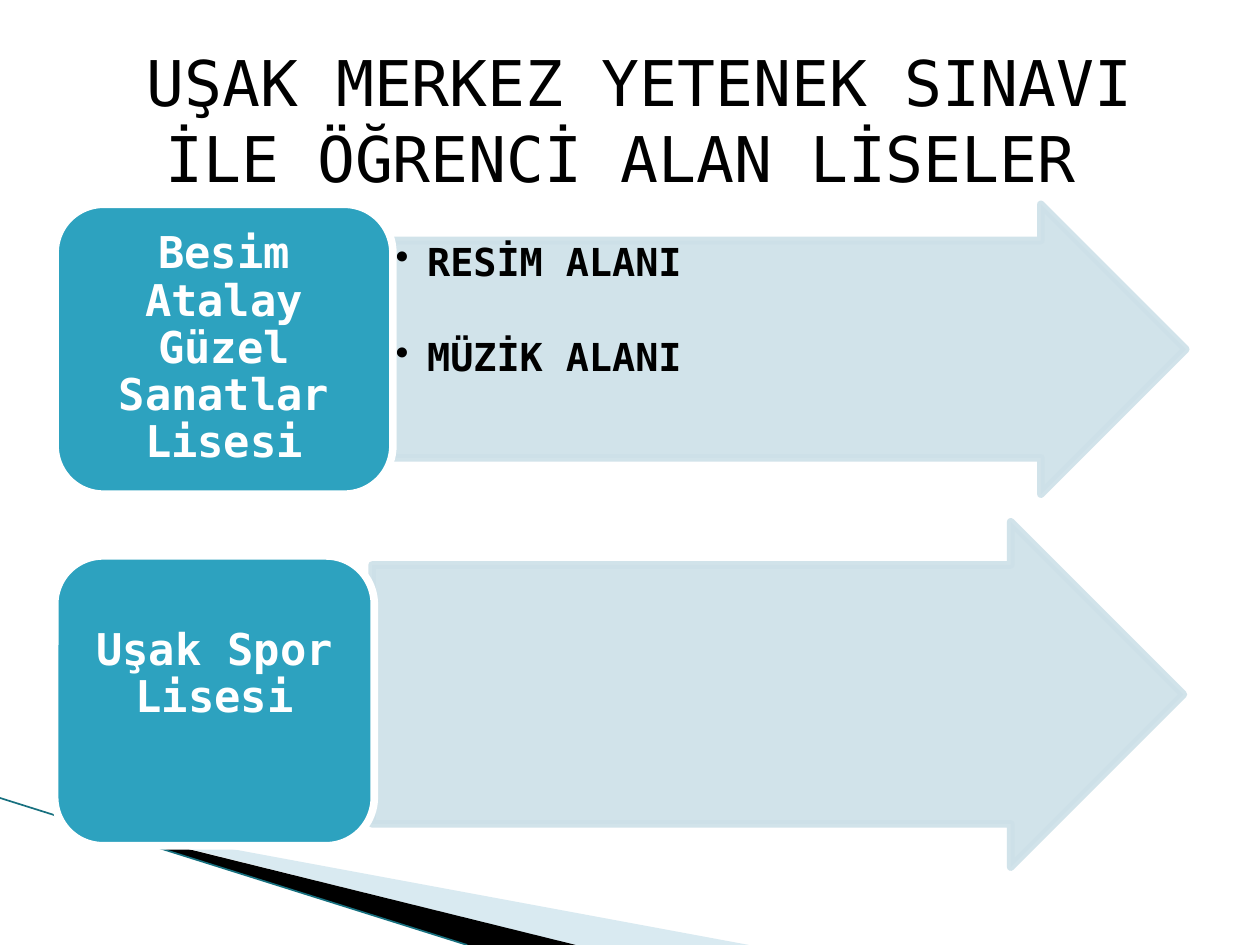
import pptx
import pptx.dml.color
import pptx.enum.shapes
import pptx.enum.text
import pptx.oxml.ns
import pptx.util
from lxml import etree

Pt = pptx.util.Pt
SHAPES = pptx.enum.shapes.MSO_SHAPE
ALIGN = pptx.enum.text.PP_ALIGN
ANCHOR = pptx.enum.text.MSO_ANCHOR
FONT = "DejaVu Sans Mono"


def add_element(parent, tag, **attributes):
    return etree.SubElement(parent, pptx.oxml.ns.qn(tag), **attributes)


def set_color(color_format, color, opacity=100):
    color_format.rgb = pptx.dml.color.RGBColor.from_string(color)
    if opacity < 100:
        element = color_format._xFill.find(pptx.oxml.ns.qn("a:srgbClr"))
        add_element(element, "a:alpha", val=str(opacity * 1000))


def paint(shape, color, opacity=100, line=None, line_width=4.33):
    shape.shadow.inherit = False
    shape.fill.solid()
    set_color(shape.fill.fore_color, color, opacity)
    if line is None:
        shape.line.fill.background()
    else:
        shape.line.fill.solid()
        set_color(shape.line.fill.fore_color, line, opacity)
        shape.line.width = Pt(line_width)


def write_text(shape, lines, size, color="000000", bold=False, align=ALIGN.CENTER,
               anchor=ANCHOR.MIDDLE, insets=(0, 0, 0, 0), spacing=1.0, gap=0, bullet=False):
    frame = shape.text_frame
    frame.word_wrap = True
    frame.vertical_anchor = anchor
    frame.margin_left, frame.margin_top, frame.margin_right, frame.margin_bottom = map(Pt, insets)
    for index, line in enumerate(lines):
        paragraph = frame.paragraphs[0] if index == 0 else frame.add_paragraph()
        paragraph.alignment = align
        paragraph.line_spacing = spacing
        if index:
            paragraph.space_before = Pt(gap)
        if bullet:
            properties = paragraph._p.get_or_add_pPr()
            properties.set("marL", str(Pt(18)))
            properties.set("indent", str(-Pt(18)))
            add_element(properties, "a:buChar", char="•")
        run = paragraph.add_run()
        run.text = line
        run.font.name = FONT
        run.font.size = Pt(size)
        run.font.bold = bold
        set_color(run.font.color, color)


def add_swoosh(slide, points, color, opacity=100):
    builder = slide.shapes.build_freeform(*points[0], scale=Pt(1))
    builder.add_line_segments(points[1:], close=True)
    paint(builder.convert_to_shape(), color, opacity)


def add_backdrop(slide, left, top, right, bottom):
    # Pale and black wedges meeting at a point on the left
    tip = (left + 39.6, top + 12.4)
    add_swoosh(slide, [tip, (428.4, bottom), (328.5, bottom)], "A0CBDC", 40)
    add_swoosh(slide, [(left + 38.2, top + 11.5), (329, bottom), (right, bottom)], "000000")
    # Thin edge line
    line = slide.shapes.add_connector(pptx.enum.shapes.MSO_CONNECTOR.STRAIGHT,
                                      Pt(left), Pt(top), Pt(right), Pt(bottom))
    set_color(line.line.color, "17707F")
    line.line.width = Pt(0.95)
    add_element(line._element.spPr, "a:effectLst")


def add_title(slide, left, top, width, height):
    title = slide.shapes.add_textbox(Pt(left), Pt(top), Pt(width), Pt(height))
    write_text(title, [" UŞAK MERKEZ YETENEK SINAVI İLE ÖĞRENCİ ALAN LİSELER"], 36)


def add_school(slide, name, fields, arrow_box, label_box, label_lift=0):
    # Arrow with the fields of study
    arrow = slide.shapes.add_shape(SHAPES.RIGHT_ARROW, *map(Pt, arrow_box))
    arrow.adjustments[0], arrow.adjustments[1] = 0.75, 0.5
    paint(arrow, "CDE0E8", 90, line="CDE0E8")
    if fields:
        write_text(arrow, fields, 22, bold=True, align=ALIGN.LEFT, anchor=ANCHOR.TOP,
                   insets=(1.5, 1.5, 1.5, 1.5), spacing=0.9, gap=30.7, bullet=True)
    # Rounded label with the school name
    label = slide.shapes.add_shape(SHAPES.ROUNDED_RECTANGLE, *map(Pt, label_box))
    paint(label, "2DA2BF", line="FFFFFF")
    write_text(label, [name], 25, "FFFFFF", bold=True, spacing=0.9,
               insets=(4, 0, 4, 2 * label_lift))


def main():
    presentation = pptx.Presentation()
    presentation.slide_width, presentation.slide_height = Pt(720), Pt(540)
    slide = presentation.slides.add_slide(presentation.slide_layouts[6])
    add_backdrop(slide, 0, 456, 267, 540)
    add_school(slide, "Besim Atalay Güzel Sanatlar Lisesi", ["RESİM ALANI", "MÜZİK ALANI"],
               (224.6, 116.8, 453, 165.6), (31.5, 116.8, 193, 165.6))
    add_school(slide, "Uşak Spor Lisesi", [],
               (212.6, 298.2, 463.6, 197.3), (31.3, 317.7, 182.6, 165.6), label_lift=15)
    add_title(slide, 54, 20.9, 601.2, 94.3)
    presentation.save("out.pptx")


if __name__ == "__main__":
    main()
